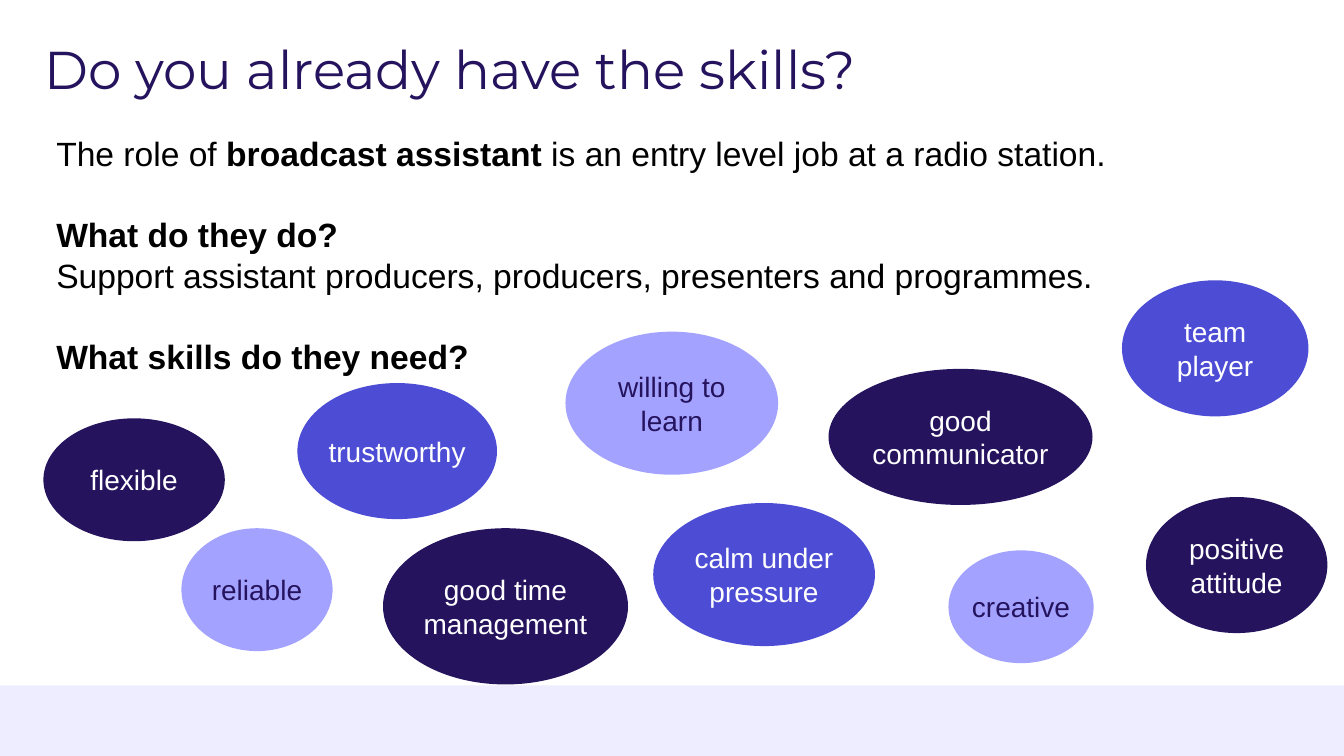
from pptx import Presentation
from pptx.dml.color import RGBColor
from pptx.enum.shapes import MSO_SHAPE as Shape
from pptx.enum.text import MSO_ANCHOR as Anchor, PP_ALIGN as Align
from pptx.util import Pt

NAVY = RGBColor(0x25, 0x13, 0x5E)
BLUE = RGBColor(0x4C, 0x4C, 0xD5)
LILAC = RGBColor(0xA3, 0xA3, 0xFF)
PALE = RGBColor(0xED, 0xED, 0xFF)
WHITE = RGBColor(0xFF, 0xFF, 0xFF)
BLACK = RGBColor(0, 0, 0)

# Text, fill, left, top, width, height
SKILLS = [
    ("team player", BLUE, 801.4, 200.2, 133.2, 97.2),
    ("reliable", LILAC, 129.6, 377.3, 108, 87.8),
    ("good time management", NAVY, 273.6, 377.3, 175, 111.6),
    ("willing to learn", LILAC, 403.9, 236.9, 151.9, 102.2),
    ("calm under pressure", BLUE, 466.6, 359.3, 158.4, 102.2),
    ("good communicator", NAVY, 591.8, 263.5, 188.6, 97.2),
    ("creative", LILAC, 677.5, 393.1, 103.7, 80.6),
    ("trustworthy", BLUE, 212.4, 273.6, 142.6, 97.2),
    ("positive attitude", NAVY, 818.6, 355, 129.6, 97.2),
    ("flexible", NAVY, 31, 298.8, 129.6, 87.8),
]

# Runs of (text, bold), space before
BODY = [
    ([("The role of ", False), ("broadcast assistant ", True),
      ("is an entry level job at a radio station.", False)], 0),
    ([("What do they do?", True)], 28.9),
    ([("Support assistant producers, producers, presenters and programmes.",
       False)], 0),
    ([("What skills do they need?", True)], 28.9),
]


def write(para, text, size=20, color=BLACK, font="Arial", bold=False):
    run = para.add_run()
    run.text = text
    run.font.name = font
    run.font.size = Pt(size)
    run.font.bold = bold
    run.font.color.rgb = color


class Deck:
    def __init__(self):
        self.prs = Presentation()
        self.prs.slide_width, self.prs.slide_height = Pt(960), Pt(540)
        self.slide = self.prs.slides.add_slide(self.prs.slide_layouts[5])

    def frame(self, shape, pad, top, anchor):
        frame = shape.text_frame
        frame.word_wrap = True
        frame.margin_left = frame.margin_right = Pt(pad)
        frame.margin_top = frame.margin_bottom = Pt(top)
        frame.vertical_anchor = anchor
        return frame

    def title(self, text, left, top, width, height):
        shape = self.slide.shapes.title
        shape.left, shape.top = Pt(left), Pt(top)
        shape.width, shape.height = Pt(width), Pt(height)
        para = self.frame(shape, 5, 3.6, Anchor.MIDDLE).paragraphs[0]
        para.alignment = Align.LEFT
        para.line_spacing = 0.9
        write(para, text, size=38, color=NAVY, font="Montserrat")

    def shape(self, kind, fill, *box):
        shape = self.slide.shapes.add_shape(kind, *map(Pt, box))
        shape.shadow.inherit = False
        shape.fill.solid()
        shape.fill.fore_color.rgb = fill
        shape.line.fill.background()
        return shape

    def bubble(self, text, fill, *box):
        shape = self.shape(Shape.OVAL, fill, *box)
        pad = 3 if fill == NAVY and text != "good communicator" else 0
        para = self.frame(shape, pad, pad, Anchor.MIDDLE).paragraphs[0]
        para.alignment = Align.CENTER
        write(para, text, color=NAVY if fill == LILAC else WHITE)

    def body(self, paras, *box):
        shape = self.slide.shapes.add_textbox(*map(Pt, box))
        frame = self.frame(shape, 7.2, 3.6, Anchor.TOP)
        for num, (runs, gap) in enumerate(paras):
            para = frame.add_paragraph() if num else frame.paragraphs[0]
            para.line_spacing = Pt(28.9)
            if gap:
                para.space_before = Pt(gap)
            for text, bold in runs:
                write(para, text, size=24, bold=bold)


def main():
    deck = Deck()
    # Footer band and title
    deck.shape(Shape.RECTANGLE, PALE, 0, 489.6, 960, 50.4)
    deck.title("Do you already have the skills?", 26.6, 25.9, 758.2, 51.8)
    # Skill bubbles
    for skill in SKILLS:
        deck.bubble(*skill)
    # Role description
    deck.body(BODY, 33.1, 91.4, 887, 181.4)
    deck.prs.save("out.pptx")


if __name__ == "__main__":
    main()
